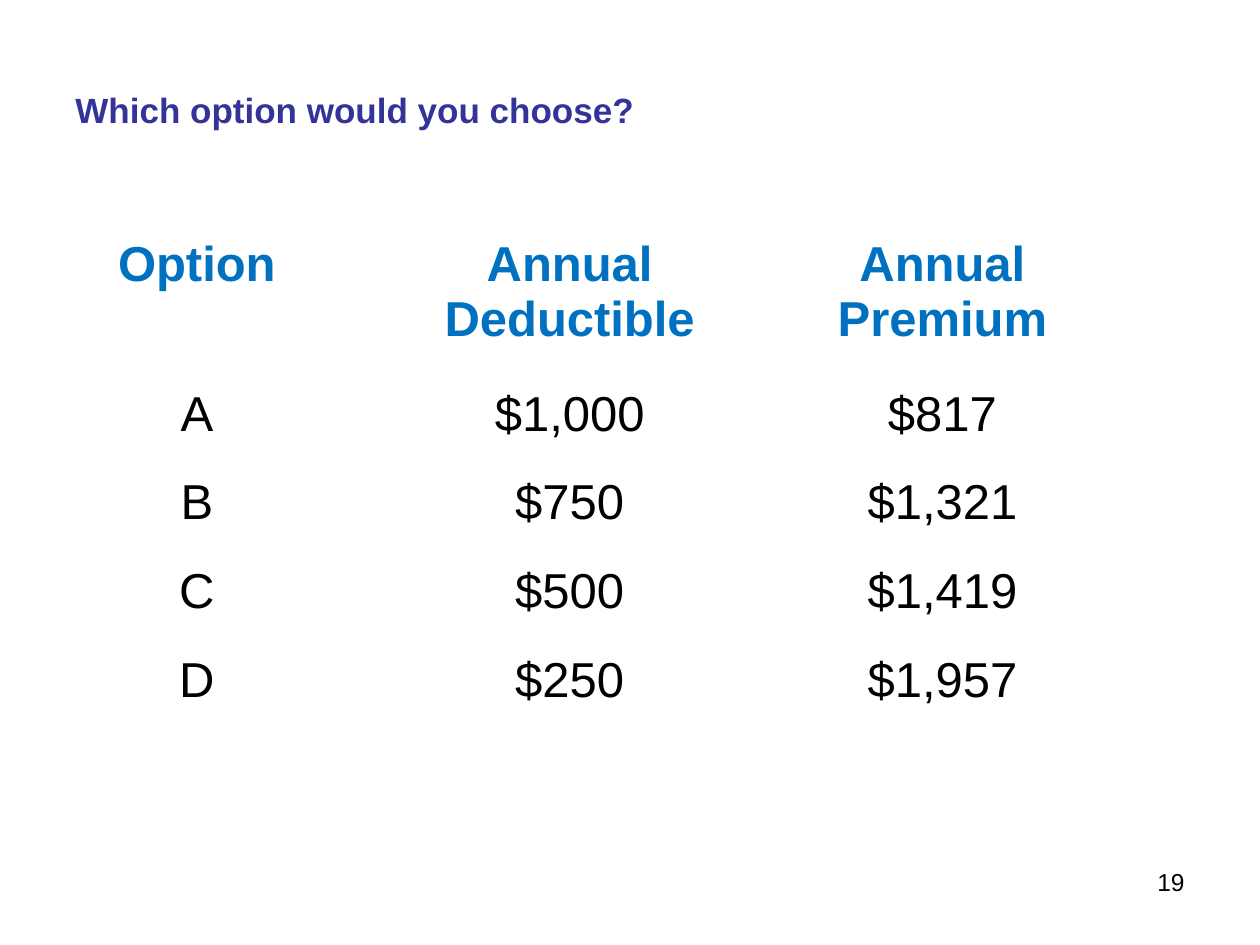
import dataclasses

import pptx
import pptx.dml.color
import pptx.enum.text
import pptx.util

Pt = pptx.util.Pt
Align = pptx.enum.text.PP_ALIGN
Anchor = pptx.enum.text.MSO_ANCHOR
Color = pptx.dml.color.RGBColor.from_string


@dataclasses.dataclass(frozen=True)
class Theme:
    font: str = "Arial"
    background: str = "FFFFFF"
    title: str = "333399"
    header: str = "0070C0"
    body: str = "000000"
    title_size: int = 20
    table_size: int = 28
    number_size: int = 14


theme = Theme()


def write(frame, text, *, size, color, bold=False, align=Align.LEFT):
    frame.word_wrap = True
    para = frame.paragraphs[0]
    para.alignment = align
    span = para.add_run()
    span.text = text
    span.font.name = theme.font
    span.font.size = Pt(size)
    span.font.bold = bold
    span.font.color.rgb = Color(color)


deck = pptx.Presentation()
deck.slide_width, deck.slide_height = Pt(720), Pt(540)
page = deck.slides.add_slide(deck.slide_layouts[6])

# Page number and title
number_box = page.shapes.add_textbox(Pt(516), Pt(492), Pt(168), Pt(37.5))
write(number_box.text_frame, "19", size=theme.number_size,
      color=theme.body, align=Align.RIGHT)

title_box = page.shapes.add_textbox(Pt(36), Pt(17.5), Pt(630), Pt(90))
title_box.text_frame.vertical_anchor = Anchor.MIDDLE
write(title_box.text_frame, "Which option would you choose?",
      size=theme.title_size, color=theme.title, bold=True)

# Insurance options
options = [
    ("Option", "Annual Deductible", "Annual Premium"),
    ("A", "$1,000", "$817"),
    ("B", "$750", "$1,321"),
    ("C", "$500", "$1,419"),
    ("D", "$250", "$1,957"),
]
header_height, row_height, column_width = 85.6, 50.6, 213
table = page.shapes.add_table(
    len(options), len(options[0]), Pt(6), Pt(132),
    Pt(column_width * len(options[0])),
    Pt(header_height + row_height * (len(options) - 1))).table
table.horz_banding = False

for column in table.columns:
    column.width = Pt(column_width)

for row_index, values in enumerate(options):
    is_header = row_index == 0
    table.rows[row_index].height = Pt(header_height if is_header else row_height)
    for column_index, value in enumerate(values):
        cell = table.cell(row_index, column_index)
        cell.fill.solid()
        cell.fill.fore_color.rgb = Color(theme.background)
        write(cell.text_frame, value, size=theme.table_size, bold=is_header,
              color=theme.header if is_header else theme.body,
              align=Align.CENTER)

deck.save("out.pptx")
